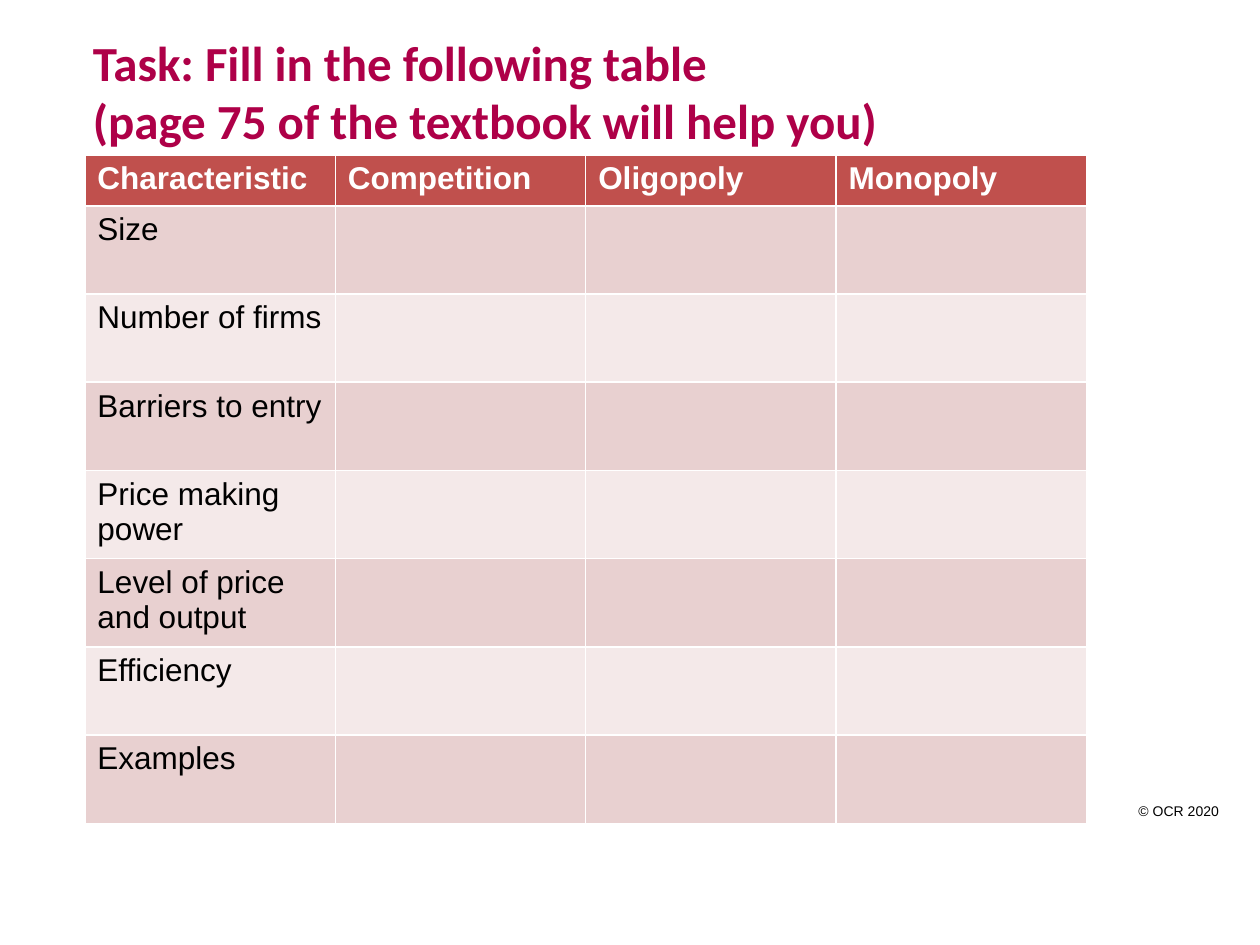
import pptx
import pptx.dml.color
import pptx.enum.text
import pptx.util

Pt = pptx.util.Pt
ANCHOR = pptx.enum.text.MSO_ANCHOR

HEADINGS = ["Characteristic", "Competition", "Oligopoly", "Monopoly"]
CHARACTERISTICS = [
    "Size",
    "Number of firms",
    "Barriers to entry",
    "Price making power",
    "Level of price and output",
    "Efficiency",
    "Examples",
]


def rgb(value):
    return pptx.dml.color.RGBColor.from_string(value)


def write(tf, text, font="Arial", size=18, color="000000", bold=False):
    for i, line in enumerate(text.split("\n")):
        p = tf.add_paragraph() if i else tf.paragraphs[0]
        r = p.add_run()
        r.text = line
        r.font.name = font
        r.font.size = Pt(size)
        r.font.bold = bold
        r.font.color.rgb = rgb(color)


class Deck:
    """Holds the style and the current slide, and draws each kind of element."""

    title_color = "AE0048"
    header_fill = "C0504D"
    band_fills = ("E8D0D0", "F4E9E9")

    def __init__(self, width, height):
        self.prs = pptx.Presentation()
        self.prs.slide_width = Pt(width)
        self.prs.slide_height = Pt(height)
        self.s = self.prs.slides.add_slide(self.prs.slide_layouts[6])

    def text(self, text, x, y, w, h, wrap=True, anchor=ANCHOR.TOP, **style):
        sp = self.s.shapes.add_textbox(Pt(x), Pt(y), Pt(w), Pt(h))
        tf = sp.text_frame
        tf.word_wrap = wrap
        tf.vertical_anchor = anchor
        write(tf, text, **style)

    def title(self, text, x, y, w, h):
        self.text(text, x, y, w, h, anchor=ANCHOR.MIDDLE, font="Calibri",
                  size=28, color=self.title_color, bold=True)

    def table(self, rows, x, y, w, header_height, row_height):
        heights = [header_height] + [row_height] * (len(rows) - 1)
        columns = len(rows[0])
        table = self.s.shapes.add_table(
            len(rows), columns, Pt(x), Pt(y), Pt(w), Pt(sum(heights))).table
        for column in table.columns:
            column.width = Pt(w / columns)
        for i, values in enumerate(rows):
            table.rows[i].height = Pt(heights[i])
            header = i == 0
            fill = self.header_fill if header else self.band_fills[(i - 1) % 2]
            for cell, value in zip(table.rows[i].cells, values):
                cell.fill.solid()
                cell.fill.fore_color.rgb = rgb(fill)
                if value:
                    write(cell.text_frame, value, bold=header,
                          color="FFFFFF" if header else "000000")

    def save(self):
        self.prs.save("out.pptx")


def main():
    deck = Deck(720, 540)
    deck.text("© OCR 2020", 643.5, 455, 61, 17, wrap=False, size=8)
    blanks = [""] * (len(HEADINGS) - 1)
    rows = [HEADINGS] + [[name] + blanks for name in CHARACTERISTICS]
    deck.table(rows, 48.5, 88.6, 572.4, 29, 50.4)
    deck.title("Task: Fill in the following table\n"
               "(page 75 of the textbook will help you)", 46, 9.4, 620, 85)
    deck.save()


if __name__ == "__main__":
    main()
